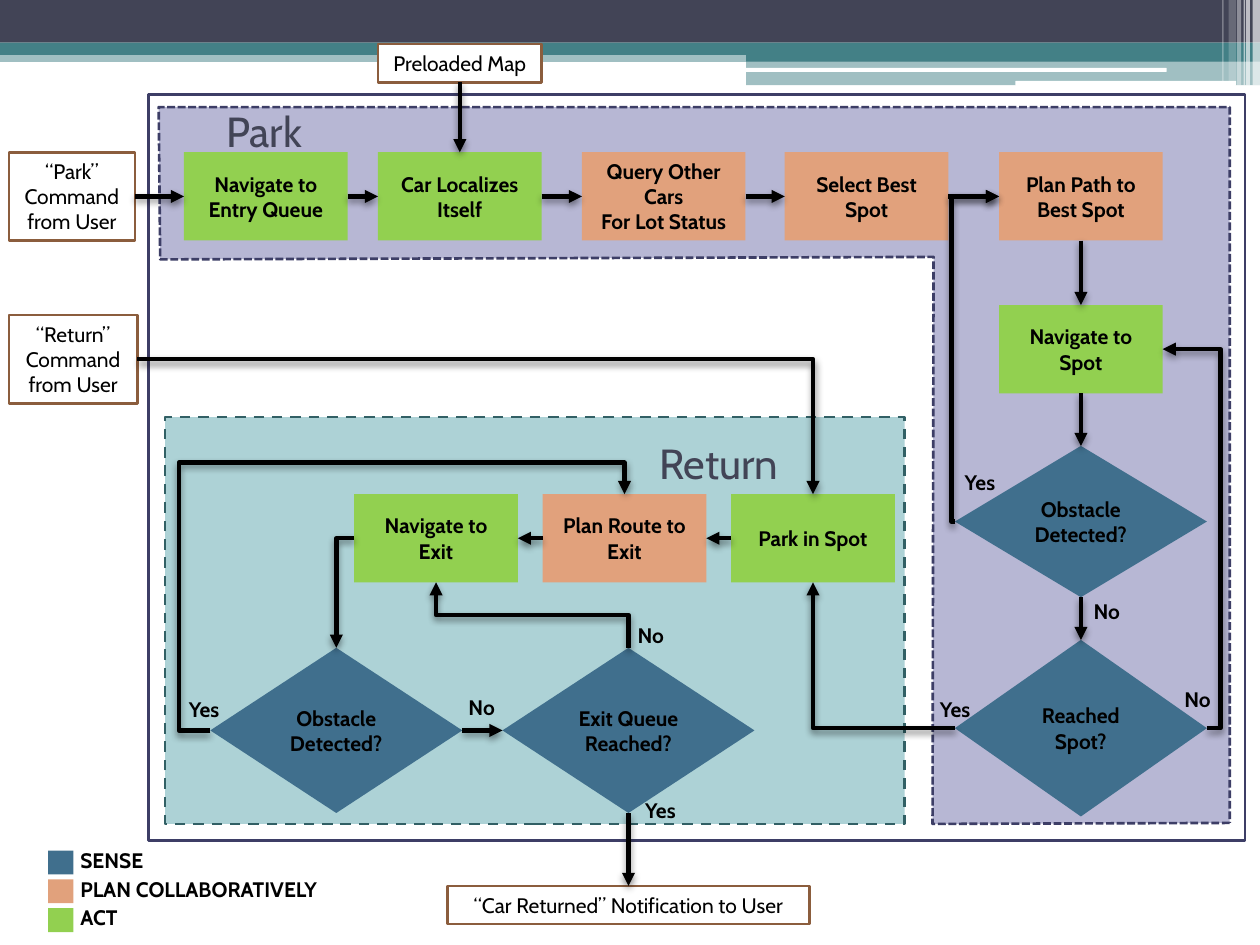
from lxml.etree import SubElement
from pptx import Presentation
from pptx.dml.color import RGBColor
from pptx.enum.dml import MSO_LINE_DASH_STYLE as Dash
from pptx.enum.shapes import MSO_CONNECTOR as Link, MSO_SHAPE as Kind
from pptx.enum.text import MSO_ANCHOR as Anchor, PP_ALIGN as Align
from pptx.oxml.ns import qn
from pptx.util import Cm, Pt

FONT = "Cabin"
BLACK, WHITE = RGBColor(0, 0, 0), RGBColor(0xFF, 0xFF, 0xFF)
SLATE, TEAL = RGBColor(0x42, 0x44, 0x56), RGBColor(0x43, 0x80, 0x86)
SENSE = RGBColor(0x40, 0x6F, 0x8D)
PLAN = RGBColor(0xE1, 0xA1, 0x7C)
ACT = RGBColor(0x92, 0xD0, 0x50)
BROWN, NAVY = RGBColor(0x8B, 0x5D, 0x3D), RGBColor(0x3D, 0x3E, 0x66)
LILAC = RGBColor(0xB7, 0xB7, 0xD4)
AQUA, DARK_TEAL = RGBColor(0xAD, 0xD2, 0xD6), RGBColor(0x32, 0x60, 0x65)

# Content; all lengths in centimetres
# Banner: kind, left, top, width, height, colour, opacity in percent
BANNER = [
    (Kind.RECTANGLE, 0, 1.02, 25.4, 0.23, TEAL, 50),
    (Kind.RECTANGLE, 0, 0, 25.4, 0.86, SLATE, 100),
    (Kind.RECTANGLE, 0, 0.86, 25.4, 0.25, TEAL, 100),
    (Kind.RECTANGLE, 15.04, 0.99, 10.36, 0.25, TEAL, 100),
    (Kind.RECTANGLE, 15.04, 1.22, 10.36, 0.5, TEAL, 50),
    (Kind.ROUNDED_RECTANGLE, 15.01, 1.37, 8.51, 0.08, WHITE, 100),
    (Kind.ROUNDED_RECTANGLE, 20.47, 1.63, 4.45, 0.1, WHITE, 100),
]
# Stripes at the banner's right end: left, width, height, opacity
STRIPES = [(25.25, 0.15, 1.73, 65), (25.12, 0.08, 1.73, 65), (25.07, 0.03, 1.73, 60),
           (24.94, 0.08, 1.73, 40), (24.77, 0.15, 1.63, 20), (24.64, 0.03, 1.63, 30)]
PARK_OUTLINE = [(24.79, 16.59), (18.8, 16.61), (18.82, 5.18),
                (3.23, 5.23), (3.2, 2.16), (24.79, 2.16)]
RETURN_AREA = (3.33, 8.41, 14.91, 8.2)
FRAME = (3, 1.9, 22.1, 15.04)
HEADINGS = [("Park", 4.06, 1.78, 2.54, 1.7), ("Return", 12.9, 8.48, 3.18, 1.7)]

STEP_W, STEP_H, DECISION_W = 3.3, 1.78, 5.08
PARK_Y, RETURN_Y, RETURN_X, RETURN_PITCH = 3.07, 9.96, 7.14, 3.8
PLAN_X, DECISION_X, EXIT_Y, EXIT_H = 20.14, 19.25, 13.06, 3.33

# Steps: key, text, colour, left, top
STEPS = [
    ("entry", "Navigate to Entry Queue", ACT, 3.71, PARK_Y),
    ("localize", "Car Localizes Itself", ACT, 7.62, PARK_Y),
    ("query", "Query Other Cars\nFor Lot Status", PLAN, 11.73, PARK_Y),
    ("select", "Select Best Spot", PLAN, 15.82, PARK_Y),
    ("plan path", "Plan Path to Best Spot", PLAN, PLAN_X, PARK_Y),
    ("to spot", "Navigate to Spot", ACT, PLAN_X, 6.15),
    ("to exit", "Navigate to Exit", ACT, RETURN_X, RETURN_Y),
    ("plan exit", "Plan Route to Exit", PLAN, RETURN_X + RETURN_PITCH, RETURN_Y),
    ("parked", "Park in Spot", ACT, RETURN_X + 2 * RETURN_PITCH, RETURN_Y),
]
# Decisions: key, text, left, top, height
DECISIONS = [
    ("park obstacle", "Obstacle Detected?", DECISION_X, 8.99, 3.05),
    ("reached spot", "Reached Spot?", DECISION_X, 12.9, 3.56),
    ("exit obstacle", "Obstacle Detected?", 4.24, EXIT_Y, EXIT_H),
    ("exit reached", "Exit Queue\nReached?", 10.13, EXIT_Y, EXIT_H),
]
# Inputs and outputs: key, text, left, top, width, height
EXTERNALS = [
    ("map", "Preloaded Map", 7.62, 0.89, 3.3, 0.77),
    ("park cmd", "“Park”\nCommand\nfrom User", 0.18, PARK_Y, 2.54, 1.78),
    ("return cmd", "“Return”\nCommand\nfrom User", 0.18, 6.35, 2.59, 1.78),
    ("notify", "“Car Returned” Notification to User", 9.02, 17.86, 7.3, 0.77),
]
TOP, LEFT, BOTTOM, RIGHT = range(4)  # connection sites
STRAIGHT = [
    ("park cmd", RIGHT, "entry", LEFT), ("entry", RIGHT, "localize", LEFT),
    ("localize", RIGHT, "query", LEFT), ("query", RIGHT, "select", LEFT),
    ("select", RIGHT, "plan path", LEFT), ("map", BOTTOM, "localize", TOP),
    ("plan path", BOTTOM, "to spot", TOP), ("to spot", BOTTOM, "park obstacle", TOP),
    ("park obstacle", BOTTOM, "reached spot", TOP),
    ("parked", LEFT, "plan exit", RIGHT), ("plan exit", LEFT, "to exit", RIGHT),
    ("exit obstacle", RIGHT, "exit reached", LEFT), ("exit reached", BOTTOM, "notify", TOP),
]
# Elbows: ends, then preset number, rotation, flips, bend positions in percent
ELBOWS = [
    (("park obstacle", LEFT, "plan path", LEFT), 3, 180, "H", [-7.9]),
    (("reached spot", RIGHT, "to spot", RIGHT), 3, 0, "HV", [-31.4]),
    (("to exit", LEFT, "exit obstacle", TOP), 2, 180, "V", []),
    (("exit obstacle", LEFT, "plan exit", TOP), 4, 180, "H", [-7.6, 113.3]),
    (("reached spot", LEFT, "parked", BOTTOM), 2, 180, "", []),
    (("return cmd", RIGHT, "parked", TOP), 2, 0, "", []),
    (("exit reached", TOP, "to exit", BOTTOM), 3, 270, "V", [50]),
]
ANSWERS = [("No", 23.62, 13.72), ("No", 21.79, 11.94), ("No", 9.19, 13.87),
           ("No", 12.6, 12.42), ("Yes", 3.53, 13.92), ("Yes", 12.73, 15.95),
           ("Yes", 19.17, 9.35), ("Yes", 18.67, 13.92)]
ANSWER_W = {"No": 1.04, "Yes": 1.17}
LEGEND = [("SENSE", SENSE), ("PLAN COLLABORATIVELY", PLAN), ("ACT", ACT)]

deck = Presentation()
deck.slide_width, deck.slide_height = Cm(25.4), Cm(19.05)
slide = deck.slides.add_slide(deck.slide_layouts[6])
nodes = {}


def paint(shape, fill=None, line=None, dash=None, opacity=100):
    shape.shadow.inherit = False
    if fill is None:
        shape.fill.background()
    else:
        shape.fill.solid()
        shape.fill.fore_color.rgb = fill
        if opacity < 100:
            color = shape._element.spPr.find(qn("a:solidFill"))[0]
            SubElement(color, qn("a:alpha"), val=str(opacity * 1000))
    if line is None:
        shape.line.fill.background()
    else:
        shape.line.color.rgb, shape.line.width = line, Pt(1.5)
        shape.line.dash_style = dash


def add_block(kind, box, *style, **options):
    shape = slide.shapes.add_shape(kind, *map(Cm, box))
    paint(shape, *style, **options)
    return shape


def write(shape, text, bold=True, size=12, color=BLACK, align=Align.CENTER,
          anchor=Anchor.MIDDLE, wrap=True):
    frame = shape.text_frame
    frame.text, frame.word_wrap, frame.vertical_anchor = text, wrap, anchor
    for paragraph in frame.paragraphs:
        paragraph.alignment = align
        for run in paragraph.runs:
            run.font.name, run.font.size, run.font.bold = FONT, Pt(size), bold
            run.font.color.rgb = color


def add_label(text, box, **options):
    write(slide.shapes.add_textbox(*map(Cm, box)), text, **options)


def add_arrow(ends, kind=Link.STRAIGHT):
    start, start_site, end, end_site = ends
    arrow = slide.shapes.add_connector(kind, 0, 0, 0, 0)
    arrow.begin_connect(nodes[start], start_site)
    arrow.end_connect(nodes[end], end_site)
    arrow.line.color.rgb, arrow.line.width = BLACK, Pt(2.5)
    props = arrow._element.spPr
    SubElement(props.find(qn("a:ln")), qn("a:tailEnd"), type="triangle")
    shadow = SubElement(SubElement(props, qn("a:effectLst")), qn("a:outerShdw"),
                        blurRad=str(Pt(4)), dist=str(Pt(2)), dir="5400000", rotWithShape="0")
    SubElement(SubElement(shadow, qn("a:srgbClr"), val="000000"), qn("a:alpha"), val="45000")
    return arrow


def add_elbow(ends, preset, turn, flips, bends):
    arrow = add_arrow(ends, Link.ELBOW)
    if turn % 180:  # a quarter turn swaps the sides about the centre
        shift = (arrow.width - arrow.height) // 2
        arrow.left, arrow.top = arrow.left + shift, arrow.top - shift
        arrow.width, arrow.height = arrow.height, arrow.width
    props = arrow._element.spPr
    frame, shape = props.find(qn("a:xfrm")), props.find(qn("a:prstGeom"))
    frame.set("rot", str(turn * 60000))
    for axis in "HV":
        frame.set("flip" + axis, str(int(axis in flips)))
    shape.set("prst", f"bentConnector{preset}")
    guides = shape.find(qn("a:avLst"))
    for number, bend in enumerate(bends, 1):
        SubElement(guides, qn("a:gd"), name=f"adj{number}", fmla=f"val {round(bend * 1000)}")


# Banner
for kind, *box, color, opacity in BANNER:
    add_block(kind, box, color, opacity=opacity)
for left, width, height, opacity in STRIPES:
    add_block(Kind.RECTANGLE, (left, 0, width, height), WHITE, opacity=opacity)

# Areas and system frame
corners = [(Cm(x), Cm(y)) for x, y in PARK_OUTLINE]
outline = slide.shapes.build_freeform(*corners[0])
outline.add_line_segments(corners[1:], close=True)
paint(outline.convert_to_shape(), LILAC, NAVY, Dash.SQUARE_DOT)
add_block(Kind.RECTANGLE, RETURN_AREA, AQUA, DARK_TEAL, Dash.DASH)
add_block(Kind.RECTANGLE, FRAME, None, NAVY)

# Flowchart nodes
for key, text, color, left, top in STEPS:
    nodes[key] = add_block(Kind.RECTANGLE, (left, top, STEP_W, STEP_H), color)
    write(nodes[key], text)
for key, text, left, top, height in DECISIONS:
    nodes[key] = add_block(Kind.DIAMOND, (left, top, DECISION_W, height), SENSE)
    write(nodes[key], text)
for key, text, *box in EXTERNALS:
    nodes[key] = add_block(Kind.RECTANGLE, box, WHITE, BROWN)
    write(nodes[key], text, bold=False, wrap=False)

# Arrows
for ends in STRAIGHT:
    add_arrow(ends)
for elbow in ELBOWS:
    add_elbow(*elbow)

# Answers, legend and headings
for text, left, top in ANSWERS:
    add_label(text, (left, top, ANSWER_W[text], 0.77), anchor=Anchor.TOP, wrap=False)
for row, (text, color) in enumerate(LEGEND):
    add_block(Kind.RECTANGLE, (0.97, 17.15 + 0.58 * row, 0.51, 0.48), color)
    add_label(text, (1.37, 16.97 + 0.57 * row, 5.7, 0.77), align=Align.LEFT, anchor=Anchor.TOP)
for text, *box in HEADINGS:
    add_label(text, box, bold=False, size=24, color=SLATE)

deck.save("out.pptx")
